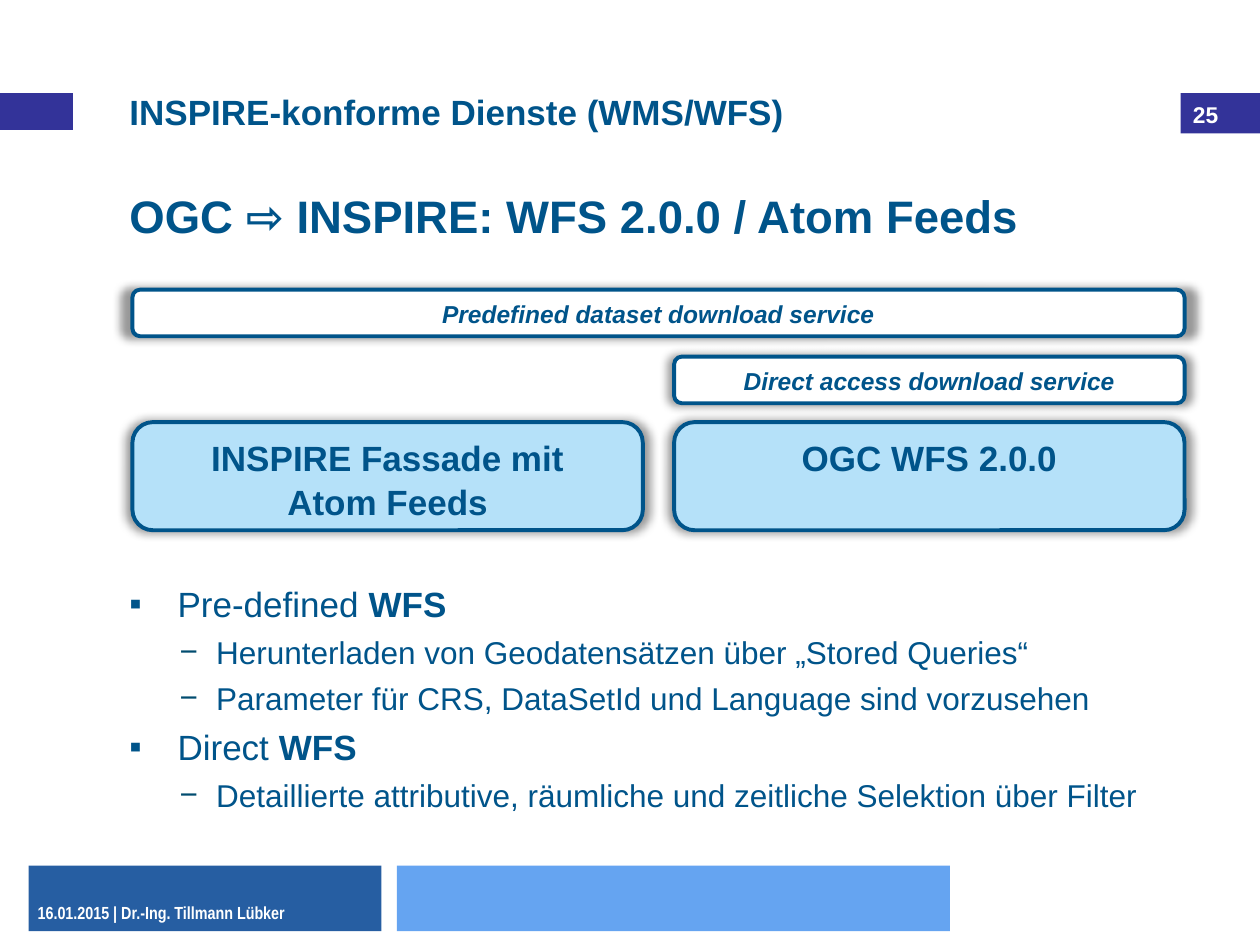
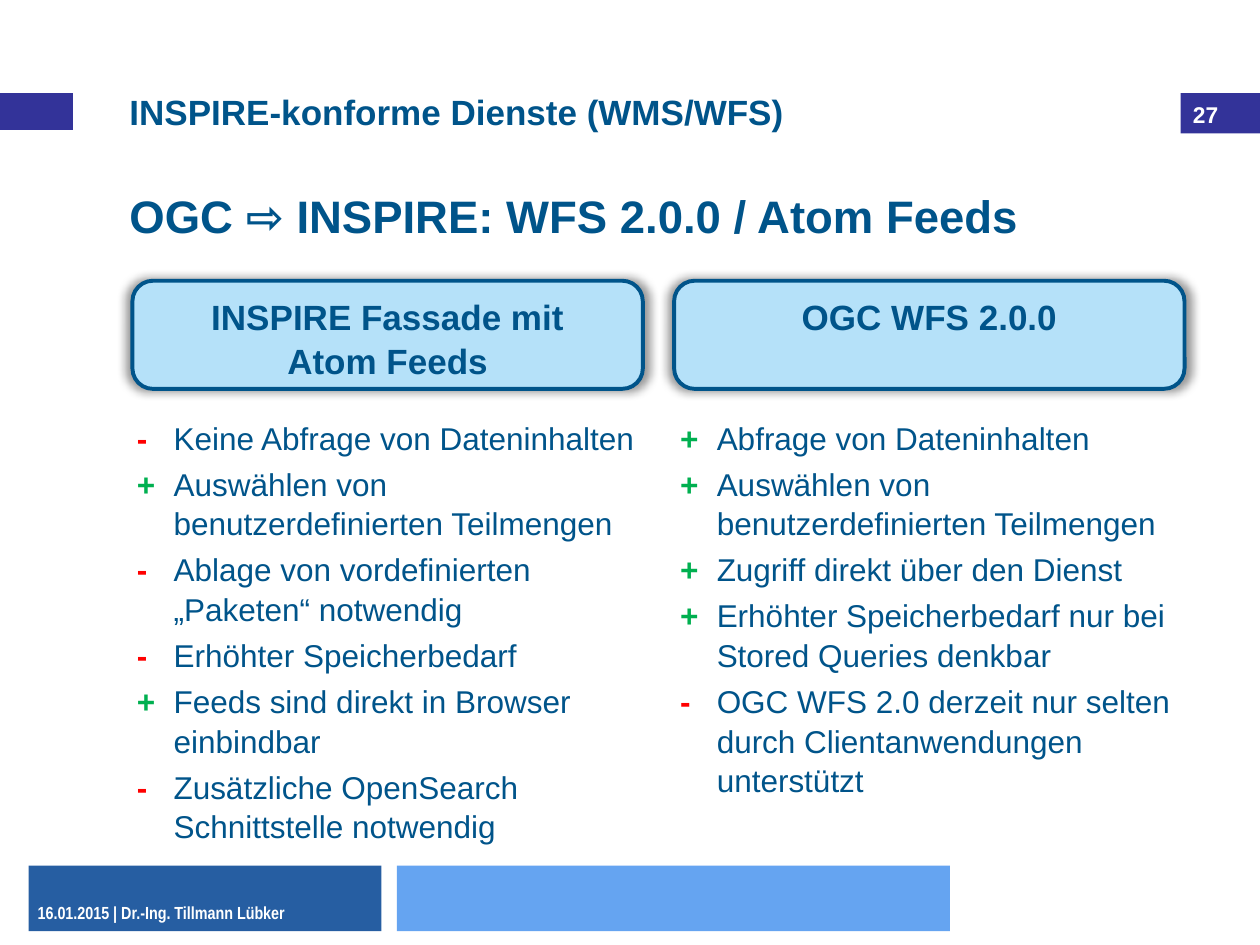
from dataclasses import dataclass

from lxml import etree
from pptx import Presentation
from pptx.dml.color import RGBColor
from pptx.enum.shapes import MSO_SHAPE
from pptx.enum.text import MSO_ANCHOR, PP_ALIGN
from pptx.oxml.ns import qn
from pptx.util import Cm, Pt

COLORS = {
    "text": "00548A",
    "dash": "004C6F",
    "band": "333399",
    "footer_dark": "265EA2",
    "footer_light": "65A4F1",
    "panel": "B5E1F9",
    "white": "FFFFFF",
    "shadow": "000000",
    "plus": "00B050",
    "minus": "FF0000",
}
FONT = "Arial"
LINE_SPACING = 1.05
SECTION = "INSPIRE-konforme Dienste (WMS/WFS)"
HEADLINE = "OGC ⇨ INSPIRE: WFS 2.0.0 / Atom Feeds"
FOOTER = "16.01.2015 | Dr.-Ing. Tillmann Lübker"

# Two-column grid, in centimetres
COLUMN_LEFT = (2.67, 13.59)
COLUMN_WIDTH = 10.29
FULL_WIDTH = COLUMN_LEFT[1] + COLUMN_WIDTH - COLUMN_LEFT[0]


@dataclass(frozen=True)
class Area:
    left: float
    top: float
    width: float
    height: float

    def lengths(self):
        return Cm(self.left), Cm(self.top), Cm(self.width), Cm(self.height)


@dataclass(frozen=True)
class TextStyle:
    size: float
    color: str = "text"
    bold: bool = True
    italic: bool = False
    font: str = FONT


@dataclass(frozen=True)
class Level:
    indent: float
    hanging: float
    size: float
    bullet: str = ""
    bullet_color: str = "text"


@dataclass(frozen=True)
class Item:
    level: Level
    spans: tuple[tuple[str, TextStyle], ...]


MAIN = Level(0.97, 0.97, 20, "▪")
SUB = Level(1.75, 0.74, 18, "−", "dash")
RATING = Level(0.74, 0.74, 18)
PANEL_TITLE = TextStyle(20)
SERVICE = TextStyle(14, italic=True)
PANELS = ("INSPIRE Fassade mit\vAtom Feeds", "OGC WFS 2.0.0")


def rgb(name: str) -> RGBColor:
    return RGBColor.from_string(COLORS[name])


def format_span(span, style: TextStyle) -> None:
    span.font.name = style.font
    span.font.size = Pt(style.size)
    span.font.bold = style.bold
    span.font.italic = style.italic
    span.font.color.rgb = rgb(style.color)


def write(frame, text: str, style: TextStyle, align=PP_ALIGN.LEFT) -> None:
    frame.word_wrap = True
    frame.text = text
    for para in frame.paragraphs:
        para.alignment = align
        para.line_spacing = LINE_SPACING
        for span in para.runs:
            format_span(span, style)


def add_label(page, area: Area, text: str, style: TextStyle) -> None:
    box = page.shapes.add_textbox(*area.lengths())
    write(box.text_frame, text, style)


def add_band(page, area: Area, color: str):
    band = page.shapes.add_shape(MSO_SHAPE.RECTANGLE, *area.lengths())
    band.shadow.inherit = False
    band.fill.solid()
    band.fill.fore_color.rgb = rgb(color)
    band.line.fill.background()
    return band


def add_glow_shadow(box) -> None:
    """Give the box a soft shadow, slightly larger than the box itself."""
    box.shadow.inherit = False
    effects = box.element.spPr.find(qn("a:effectLst"))
    shadow = etree.SubElement(
        effects, qn("a:outerShdw"), blurRad=str(Pt(5)), sx="102000",
        sy="102000", algn="ctr", rotWithShape="0")
    color = etree.SubElement(shadow, qn("a:srgbClr"), val=COLORS["shadow"])
    etree.SubElement(color, qn("a:alpha"), val="40000")


def add_round_box(page, area: Area, text: str, style: TextStyle, fill: str):
    box = page.shapes.add_shape(MSO_SHAPE.ROUNDED_RECTANGLE, *area.lengths())
    box.fill.solid()
    box.fill.fore_color.rgb = rgb(fill)
    box.line.color.rgb = rgb("text")
    box.line.width = Pt(2.25)
    add_glow_shadow(box)
    write(box.text_frame, text, style, PP_ALIGN.CENTER)
    box.text_frame.vertical_anchor = MSO_ANCHOR.MIDDLE
    return box


def add_panels(page, top: float) -> None:
    for left, title in zip(COLUMN_LEFT, PANELS):
        area = Area(left, top, COLUMN_WIDTH, 2.18)
        box = add_round_box(page, area, title, PANEL_TITLE, "panel")
        box.adjustments[0] = 0.19
        box.text_frame.vertical_anchor = MSO_ANCHOR.TOP


def set_level(para, level: Level) -> None:
    props = para._p.get_or_add_pPr()
    props.set("marL", str(Cm(level.indent)))
    props.set("indent", str(-Cm(level.hanging)))
    if level.bullet:
        color = etree.SubElement(props, qn("a:buClr"))
        etree.SubElement(color, qn("a:srgbClr"), val=COLORS[level.bullet_color])
        etree.SubElement(props, qn("a:buFont"), typeface=FONT)
        etree.SubElement(props, qn("a:buChar"), char=level.bullet)
    else:
        etree.SubElement(props, qn("a:buNone"))
        tabs = etree.SubElement(props, qn("a:tabLst"))
        etree.SubElement(tabs, qn("a:tab"), pos=str(Cm(level.indent)), algn="l")


def add_list(page, area: Area, items: list[Item]) -> None:
    frame = page.shapes.add_textbox(*area.lengths()).text_frame
    frame.word_wrap = True
    for index, item in enumerate(items):
        para = frame.add_paragraph() if index else frame.paragraphs[0]
        set_level(para, item.level)
        para.line_spacing = LINE_SPACING
        para.space_before = Pt(0.2 * item.level.size if index else 0)
        for text, style in item.spans:
            span = para.add_run()
            span.text = text
            format_span(span, style)


def main_item(text: str, strong: str) -> Item:
    return Item(MAIN, ((text, TextStyle(MAIN.size, bold=False)),
                       (strong, TextStyle(MAIN.size))))


def sub_item(text: str) -> Item:
    return Item(SUB, ((text, TextStyle(SUB.size, bold=False)),))


def rating_item(sign: str, text: str) -> Item:
    color = "plus" if sign == "+" else "minus"
    return Item(RATING, ((sign, TextStyle(RATING.size, color)),
                         ("\t" + text, TextStyle(RATING.size, bold=False))))


def add_page(deck, number: int):
    """Add a page with the shared bands, titles, number and footer."""
    page = deck.slides.add_slide(deck.slide_layouts[6])
    add_label(page, Area(2.36, 1.65, 17.91, 1.12), SECTION, TextStyle(20))
    add_band(page, Area(8, 17.45, 11.15, 1.32), "footer_light")
    add_band(page, Area(0.58, 17.45, 7.11, 1.32), "footer_dark")
    add_label(page, Area(0.51, 18.03, 10.16, 0.69), FOOTER,
              TextStyle(10, "white", font="Arial Narrow"))
    number_band = add_band(page, Area(23.8, 1.88, 1.6, 0.81), "band")
    write(number_band.text_frame, str(number), TextStyle(13, "white"))
    add_band(page, Area(0, 1.88, 1.47, 0.74), "band")
    add_label(page, Area(2.36, 3.61, 19.84, 1.37), HEADLINE, TextStyle(26))
    return page


def build_services(deck) -> None:
    page = add_page(deck, 25)
    add_panels(page, 8.51)
    left, right = COLUMN_LEFT
    add_round_box(page, Area(left, 5.84, FULL_WIDTH, 0.94),
                  "Predefined dataset download service", SERVICE, "white")
    add_round_box(page, Area(right, 7.19, COLUMN_WIDTH, 0.94),
                  "Direct access download service", SERVICE, "white")
    add_list(page, Area(2.36, 11.58, 21.97, 5.05), [
        main_item("Pre-defined ", "WFS"),
        sub_item("Herunterladen von Geodatensätzen über „Stored Queries“"),
        sub_item("Parameter für CRS, DataSetId und Language sind vorzusehen"),
        main_item("Direct ", "WFS"),
        sub_item("Detaillierte attributive, räumliche und zeitliche "
                 "Selektion über Filter"),
    ])


def build_comparison(deck) -> None:
    page = add_page(deck, 27)
    add_list(page, Area(2.51, 8.28, 10.62, 8.71), [
        rating_item("-", "Keine Abfrage von Dateninhalten"),
        rating_item("+", "Auswählen von benutzerdefinierten Teilmengen"),
        rating_item("-", "Ablage von vordefinierten „Paketen“ notwendig"),
        rating_item("-", "Erhöhter Speicherbedarf"),
        rating_item("+", "Feeds sind direkt in Browser einbindbar"),
        rating_item("-", "Zusätzliche OpenSearch Schnittstelle notwendig"),
    ])
    add_list(page, Area(13.46, 8.28, 10.54, 8.03), [
        rating_item("+", "Abfrage von Dateninhalten"),
        rating_item("+", "Auswählen von benutzerdefinierten Teilmengen"),
        rating_item("+", "Zugriff direkt über den Dienst"),
        rating_item("+", "Erhöhter Speicherbedarf nur bei Stored Queries denkbar"),
        rating_item("-", "OGC WFS 2.0 derzeit nur selten durch "
                         "Clientanwendungen unterstützt"),
    ])
    add_panels(page, 5.66)


def main() -> None:
    deck = Presentation()
    deck.slide_width, deck.slide_height = Cm(25.4), Cm(19.05)
    build_services(deck)
    build_comparison(deck)
    deck.save("out.pptx")


if __name__ == "__main__":
    main()
